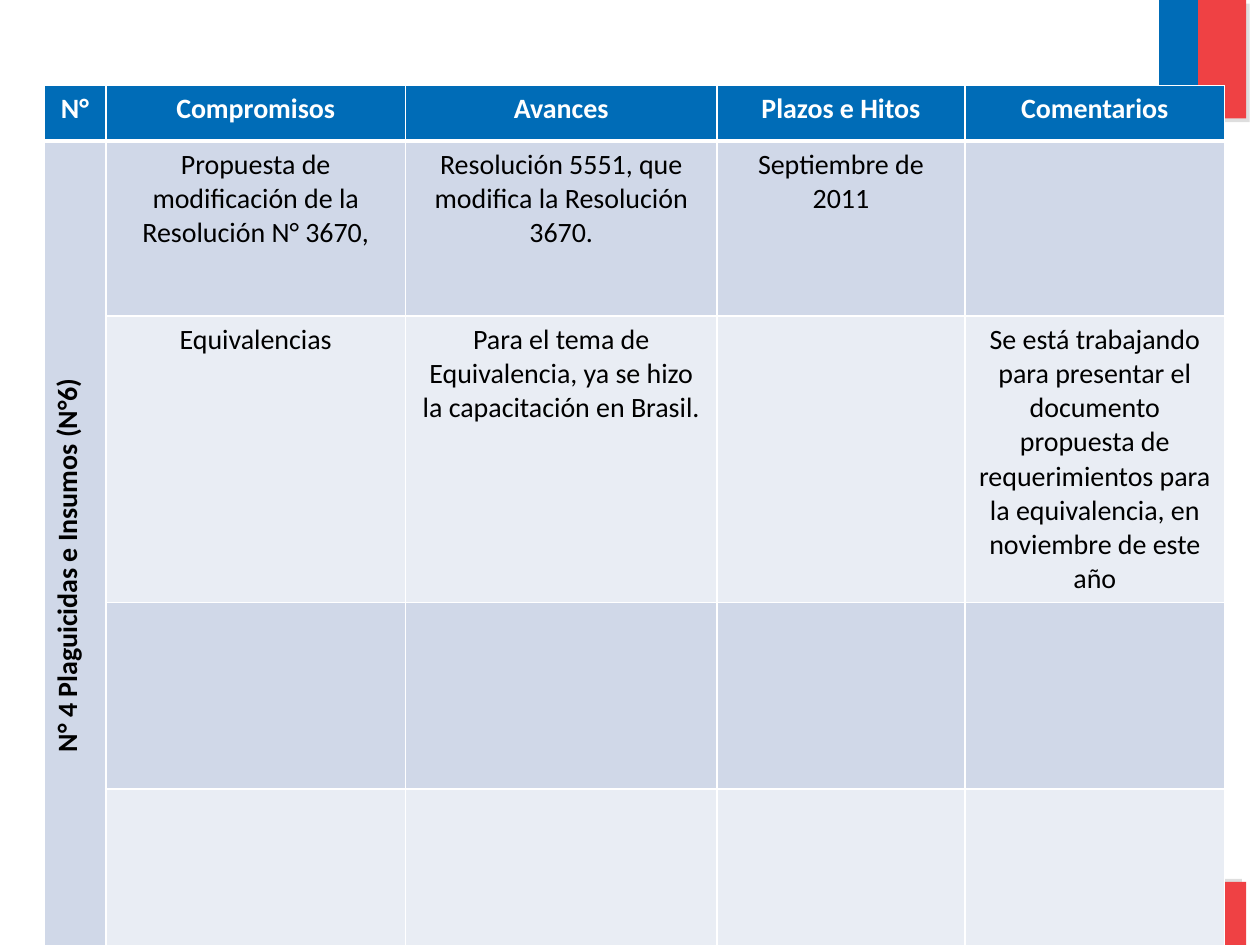
"""Build a one-slide commitments table with corner flag bands."""
import lxml.etree
import pptx
import pptx.dml.color
import pptx.enum.shapes
import pptx.enum.text
import pptx.oxml
import pptx.oxml.ns
import pptx.util

THEME = {
    "blue": "006CB7", "red": "EF4144", "shadow": "808080",
    "odd": "D0D8E8", "even": "E9EDF4", "white": "FFFFFF", "black": "000000",
    "font": "Calibri", "size": 16, "rule": 1, "header_rule": 3,
}
COLUMNS = [0.49, 2.38, 2.47, 1.97, 2.06]
ROWS = [0.44, 1.39, 1.48, 1.48, 1.59]
BANDS = [("blue", 9.2, 0.31), ("red", 9.51, 0.38)]
FLAGS = [(0, 0.94, 45), (7, 0.5, 215)]
TEXTS = [
    ["N°", "Compromisos", "Avances", "Plazos e Hitos", "Comentarios"],
    ["N° 4 Plaguicidas e Insumos (N°6)",
     "Propuesta de modificación de la Resolución N° 3670,",
     "Resolución 5551, que modifica la Resolución 3670.",
     "Septiembre de 2011", ""],
    ["", "Equivalencias",
     "Para el tema de Equivalencia, ya se hizo la capacitación en Brasil.", "",
     "Se está trabajando para presentar el documento propuesta de "
     "requerimientos para la equivalencia, en noviembre de este año"],
    [""] * 5,
    [""] * 5,
]


def color(name):
    return pptx.dml.color.RGBColor.from_string(THEME[name])


def add_xml(parent, markup):
    namespace = pptx.oxml.ns.nsdecls("a")
    parent.append(pptx.oxml.parse_xml(markup.replace(" ", f" {namespace} ", 1)))


deck = pptx.Presentation()
deck.slide_width = pptx.util.Inches(10)
deck.slide_height = pptx.util.Inches(7.5)
page = deck.slides.add_slide(deck.slide_layouts[6])

for top, height, angle in FLAGS:
    for name, left, width in BANDS:
        band = page.shapes.add_shape(
            pptx.enum.shapes.MSO_SHAPE.RECTANGLE,
            *map(pptx.util.Inches, (left, top, width, height)))
        band.fill.solid()
        band.fill.fore_color.rgb = color(name)
        band.line.fill.background()
        add_xml(band.element.spPr, (
            f'<a:effectLst ><a:outerShdw dist="{pptx.util.Pt(3)}" dir="{angle * 60000}" '
            f'algn="ctr" rotWithShape="0"><a:srgbClr val="{THEME["shadow"]}">'
            '<a:alpha val="25000"/></a:srgbClr></a:outerShdw></a:effectLst>'))

frame = page.shapes.add_table(
    len(ROWS), len(COLUMNS),
    *map(pptx.util.Inches, (0.35, 0.68, sum(COLUMNS), sum(ROWS))))
table = frame.table
for column, width in zip(table.columns, COLUMNS):
    column.width = pptx.util.Inches(width)
for row, height in zip(table.rows, ROWS):
    row.height = pptx.util.Inches(height)

for row_index, texts in enumerate(TEXTS):
    header = row_index == 0
    for column_index, text in enumerate(texts):
        cell = table.cell(row_index, column_index)
        properties = cell._tc.get_or_add_tcPr()
        thick_side = {0: "B", 1: "T"}.get(row_index)
        for side in "LRTB":
            weight = THEME["header_rule" if side == thick_side else "rule"]
            add_xml(properties, (
                f'<a:ln{side} w="{pptx.util.Pt(weight)}"><a:solidFill>'
                f'<a:srgbClr val="{THEME["white"]}"/></a:solidFill></a:ln{side}>'))
        shade = "odd" if row_index % 2 or column_index == 0 else "even"
        cell.fill.solid()
        cell.fill.fore_color.rgb = color("blue" if header else shade)
        cell.text_frame.text = text
        para = cell.text_frame.paragraphs[0]
        para.alignment = pptx.enum.text.PP_ALIGN.CENTER
        para.font.size = pptx.util.Pt(THEME["size"])
        for span in para.runs:
            span.font.name = THEME["font"]
            span.font.size = pptx.util.Pt(THEME["size"])
            span.font.bold = header or column_index == 0
            span.font.color.rgb = color("white" if header else "black")

side_label = table.cell(1, 0)
side_label.merge(table.cell(len(ROWS) - 1, 0))
side_label._tc.get_or_add_tcPr().set("vert", "vert270")

deck.save("out.pptx")
